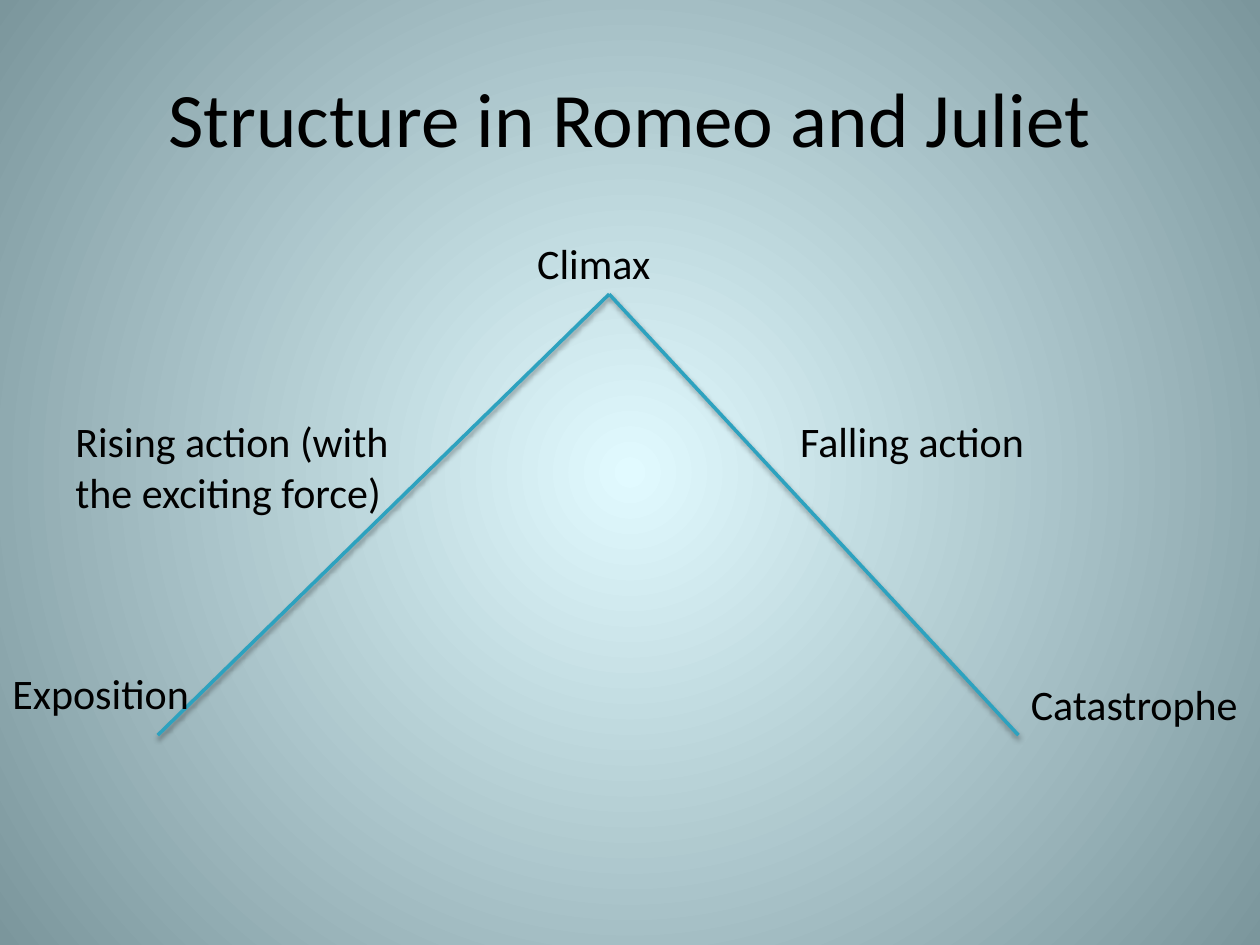
from dataclasses import dataclass

from pptx import Presentation
from pptx.dml.color import RGBColor
from pptx.enum.shapes import MSO_CONNECTOR
from pptx.enum.text import MSO_ANCHOR, MSO_AUTO_SIZE, PP_ALIGN
from pptx.oxml import parse_xml
from pptx.oxml.ns import nsdecls, qn
from pptx.slide import Slide
from pptx.util import Cm, Pt

STRAIGHT = MSO_CONNECTOR.STRAIGHT
TOP, MIDDLE = MSO_ANCHOR.TOP, MSO_ANCHOR.MIDDLE
LEFT, CENTER = PP_ALIGN.LEFT, PP_ALIGN.CENTER
FIT_SHAPE, NO_FIT = MSO_AUTO_SIZE.SHAPE_TO_FIT_TEXT, MSO_AUTO_SIZE.NONE

FONT = "Calibri"
COLORS = {
    "text": "000000",
    "line": "2DA2BF",
    "shadow": "000000",
    "glow_center": "E1FAFF",
    "glow_edge": "7B969C",
}


@dataclass
class Label:
    """A text box, with lengths in centimetres and the size in points."""
    text: str
    left: float
    top: float
    width: float
    height: float = 1.27
    size: int = 24
    align: PP_ALIGN = LEFT
    anchor: MSO_ANCHOR = TOP
    auto_size: MSO_AUTO_SIZE = FIT_SHAPE


TITLE = Label("Structure in Romeo and Juliet", 1.27, 0.76, 22.86, 3.18,
              size=44, align=CENTER, anchor=MIDDLE, auto_size=NO_FIT)
STAGES = [
    Label("Exposition", 0, 13.34, 4.87),
    Label("Rising action (with the exciting force)", 1.27, 8.26, 8.05, 2.31),
    Label("Climax", 10.58, 4.66, 4.87),
    Label("Falling action", 15.88, 8.26, 5.5),
    Label("Catastrophe", 20.53, 13.55, 4.87),
]
PEAK = (12.28, 5.93)
FEET = [(3.18, 14.82), (20.53, 14.82)]


def paint_background(page: Slide) -> None:
    """Fill the page with a gradient that spreads in circles from the centre."""
    fill = page.background.fill
    fill.gradient()
    for stop, name in zip(fill.gradient_stops, ("glow_center", "glow_edge")):
        stop.color.rgb = RGBColor.from_string(COLORS[name])
    gradient = next(page.element.iter(qn("a:gradFill")))
    circle = parse_xml(
        f'<a:path {nsdecls("a")} path="circle">'
        '<a:fillToRect l="50000" t="50000" r="50000" b="50000"/></a:path>')
    gradient.replace(gradient.find(qn("a:lin")), circle)


def add_label(page: Slide, label: Label) -> None:
    box = page.shapes.add_textbox(Cm(label.left), Cm(label.top),
                                  Cm(label.width), Cm(label.height))
    frame = box.text_frame
    frame.text = label.text
    frame.word_wrap = True
    frame.auto_size = label.auto_size
    frame.vertical_anchor = label.anchor
    para = frame.paragraphs[0]
    para.alignment = label.align
    font = para.runs[0].font
    font.name = FONT
    font.size = Pt(label.size)
    font.color.rgb = RGBColor.from_string(COLORS["text"])


def add_slope(page: Slide, foot: tuple[float, float]) -> None:
    """Draw a softly shadowed line from a foot of the pyramid to its peak."""
    slope = page.shapes.add_connector(
        STRAIGHT, *(Cm(length) for length in foot + PEAK))
    slope.line.color.rgb = RGBColor.from_string(COLORS["line"])
    slope.line.width = Pt(2)
    slope.element.spPr.append(parse_xml(
        f'<a:effectLst {nsdecls("a")}>'
        f'<a:outerShdw blurRad="{Pt(3.1)}" dist="{Pt(1.6)}" dir="5400000" rotWithShape="0">'
        f'<a:srgbClr val="{COLORS["shadow"]}"><a:alpha val="38000"/></a:srgbClr>'
        '</a:outerShdw></a:effectLst>'))


def main() -> None:
    deck = Presentation()
    deck.slide_width, deck.slide_height = Cm(25.4), Cm(19.05)
    page = deck.slides.add_slide(deck.slide_layouts[6])
    paint_background(page)
    add_label(page, TITLE)
    for foot in FEET:
        add_slope(page, foot)
    for stage in STAGES:
        add_label(page, stage)
    deck.save("out.pptx")


if __name__ == "__main__":
    main()
